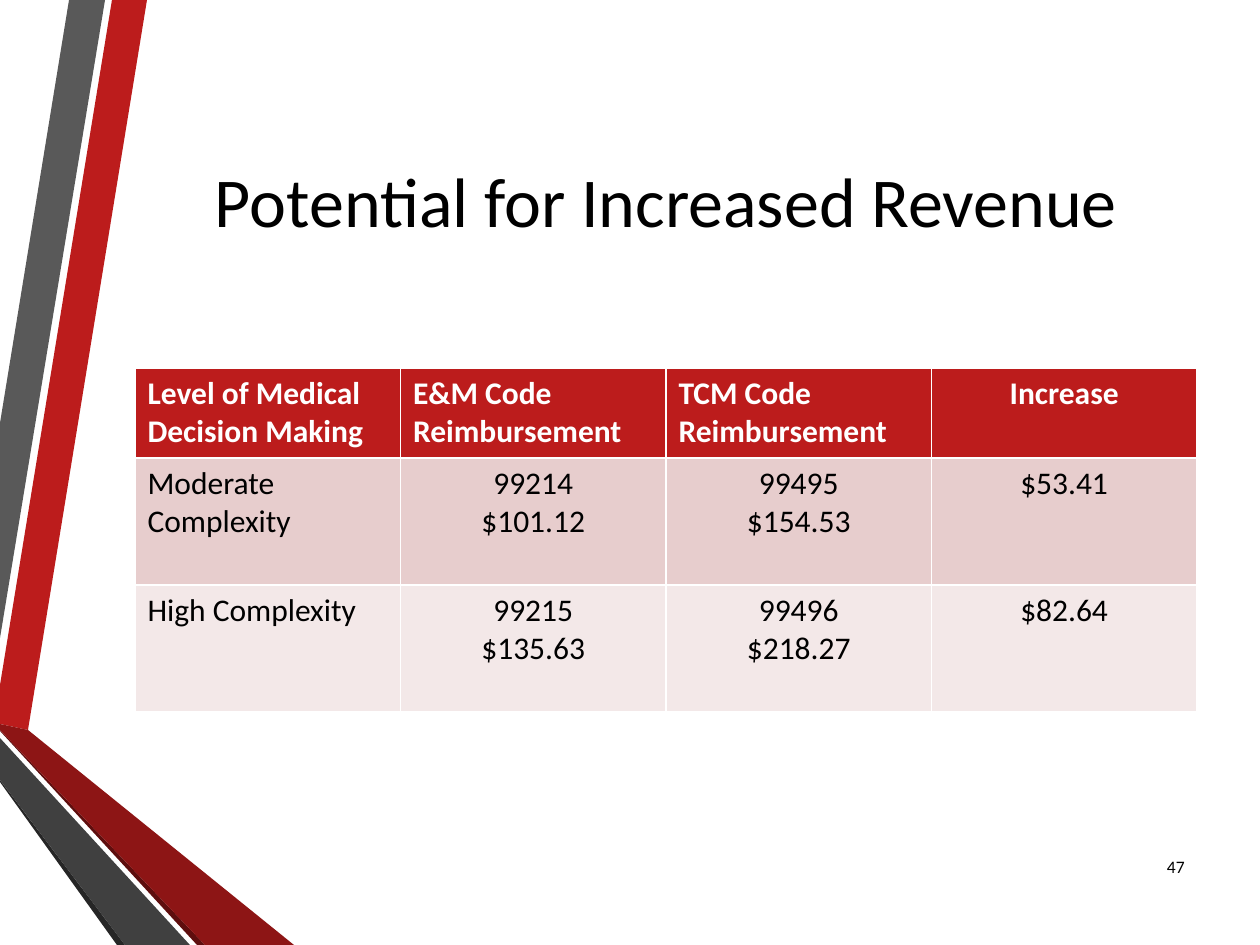
from pptx import Presentation
from pptx.dml.color import RGBColor
from pptx.enum.text import MSO_ANCHOR, PP_ALIGN
from pptx.util import Pt

EMU_PER_PX = 914400 / 126
PAGE_WIDTH, PAGE_HEIGHT = 1260, 945
TITLE_ONLY_LAYOUT = 5
FONT = "Calibri"
LEFT, CENTER, RIGHT = PP_ALIGN.LEFT, PP_ALIGN.CENTER, PP_ALIGN.RIGHT
MIDDLE = MSO_ANCHOR.MIDDLE

COLORS = {
    "red": "BC1C1C", "dark red": "8D1515", "deep red": "5E0E0E",
    "gray": "595959", "dark gray": "404040", "deep gray": "262626",
    "band": "E7CDCD", "light band": "F3E8E8",
    "black": "000000", "white": "FFFFFF",
}

RIBBONS = [
    ("red", [(0, 685), (0, 724), (28, 730), (147, 0), (112, 0)]),
    ("gray", [(105, 0), (69, 0), (0, 423), (0, 638)]),
    ("deep gray", [(0, 780), (0, 782), (117, 945), (125, 945)]),
    ("deep red", [(0, 730), (0, 731), (197, 945), (205, 945)]),
    ("dark red", [(0, 730), (205, 945), (294, 945), (28, 730), (0, 724)]),
    ("dark gray", [(0, 780), (125, 945), (190, 945), (0, 738)]),
]

HEADER = ["Level of Medical Decision Making", "E&M Code Reimbursement",
          "TCM Code Reimbursement", "Increase"]
BODY = [
    ["Moderate Complexity", "99214\n$101.12", "99495\n$154.53", "$53.41"],
    ["High Complexity", "99215\n$135.63", "99496\n$218.27", "$82.64"],
]
HEADER_HEIGHT = 90


def emu(px):
    return round(px * EMU_PER_PX)


def color(name):
    return RGBColor.from_string(COLORS[name])


def write(frame, text, size, align, color_name="black", bold=False):
    frame.text = text
    for para in frame.paragraphs:
        para.alignment = align
        for span in para.runs:
            span.font.name = FONT
            span.font.size = Pt(size)
            span.font.bold = bold
            span.font.color.rgb = color(color_name)


def add_ribbons(page, box):
    left, top = box[:2]
    for color_name, outline in RIBBONS:
        points = [(left + x, top + y) for x, y in outline]
        builder = page.shapes.build_freeform(*points[0], scale=EMU_PER_PX)
        builder.add_line_segments(points[1:], close=True)
        ribbon = builder.convert_to_shape()
        ribbon.shadow.inherit = False
        ribbon.fill.solid()
        ribbon.fill.fore_color.rgb = color(color_name)
        ribbon.line.fill.background()


def place_title(page, box):
    title = page.shapes.title
    title.left, title.top, title.width, title.height = map(emu, box)
    title.text_frame.vertical_anchor = MIDDLE
    write(title.text_frame, "Potential for Increased Revenue", 40, CENTER)


def add_revenue_table(page, box):
    rows = [HEADER] + BODY
    table = page.shapes.add_table(len(rows), len(HEADER), *map(emu, box)).table
    for column in table.columns:
        column.width = emu(box[2] / len(HEADER))
    body_height = (box[3] - HEADER_HEIGHT) / len(BODY)
    for row_index, texts in enumerate(rows):
        is_header = row_index == 0
        table.rows[row_index].height = emu(HEADER_HEIGHT if is_header else body_height)
        fill = ("red", "band", "light band")[row_index]
        for column_index, text in enumerate(texts):
            cell = table.cell(row_index, column_index)
            cell.fill.solid()
            cell.fill.fore_color.rgb = color(fill)
            is_left = column_index == 0 or (is_header and text != "Increase")
            write(cell.text_frame, text, 18, LEFT if is_left else CENTER,
                  "white" if is_header else "black", is_header)


def add_page_number(page, box):
    frame = page.shapes.add_textbox(*map(emu, box)).text_frame
    frame.word_wrap = True
    frame.vertical_anchor = MIDDLE
    write(frame, "47", 10, RIGHT)


def build_revenue_slide(deck):
    page = deck.slides.add_slide(deck.slide_layouts[TITLE_ONLY_LAYOUT])
    add_ribbons(page, (0, 0, 294, PAGE_HEIGHT))
    place_title(page, (135, 63, 1062, 273))
    add_revenue_table(page, (135, 368, 1062, 344))
    add_page_number(page, (1138, 842, 59, 50))


def main():
    deck = Presentation()
    deck.slide_width, deck.slide_height = emu(PAGE_WIDTH), emu(PAGE_HEIGHT)
    build_revenue_slide(deck)
    deck.save("out.pptx")


if __name__ == "__main__":
    main()
